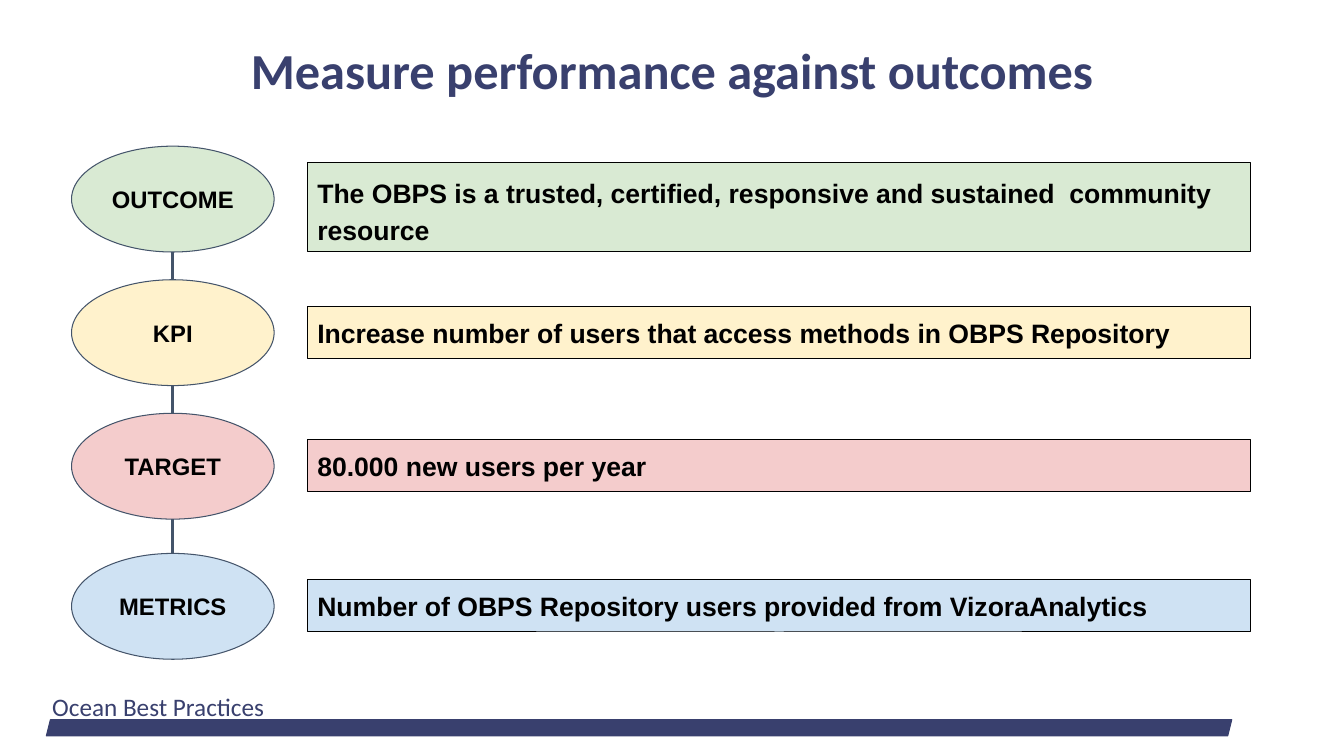
"""Build the slide that links an outcome to its KPI, target and metrics."""
from dataclasses import dataclass
from itertools import pairwise

from lxml import etree
from pptx import Presentation
from pptx import util as u
from pptx.dml.color import RGBColor
from pptx.enum import shapes, text
from pptx.oxml.ns import qn

WIDTH, HEIGHT = u.Inches(13.33), u.Inches(7.5)
COLUMNS, ROWS = 40, 30
NAVY, SLATE, BLACK = "39406E", "44546A", "000000"
BUBBLE_LEFT, BUBBLE_WIDTH, BUBBLE_HEIGHT = 2.13, 6.03, 4.2
PANEL_LEFT, PANEL_WIDTH = 9.15, 28.08


@dataclass(frozen=True)
class Level:
    label: str
    statement: str
    fill: str
    middle: float
    panel_top: float
    panel_height: float = 2.08
    line_spacing: float = 1.0


LEVELS = [
    Level("OUTCOME",
          "The OBPS is a trusted, certified, responsive and sustained  community resource",
          "D9EAD3", 7.9, 6.44, 3.56, 1.15),
    Level("KPI", "Increase number of users that access methods in OBPS Repository",
          "FFF2CC", 13.2, 12.16),
    Level("TARGET", "80.000 new users per year", "F4CCCC", 18.5, 17.44),
    Level("METRICS", "Number of OBPS Repository users provided from VizoraAnalytics",
          "CFE2F3", 24.06, 23),
]


def color(value: str) -> RGBColor:
    return RGBColor.from_string(value)


def across(columns: float) -> int:
    return round(WIDTH * columns / COLUMNS)


def down(rows: float) -> int:
    return round(HEIGHT * rows / ROWS)


def box(left: float, top: float, width: float, height: float) -> tuple[int, int, int, int]:
    return across(left), down(top), across(width), down(height)


def add_block(slide, kind, place: tuple, fill: str, line: str, weight: float = 0.75):
    shape = slide.shapes.add_shape(kind, *place)
    shape.shadow.inherit = False
    shape.fill.solid()
    shape.fill.fore_color.rgb = color(fill)
    shape.line.color.rgb = color(line)
    shape.line.width = u.Pt(weight)
    return shape


def write(shape, words: str, size: float, font: str, ink: str, bold: bool = True,
          align=text.PP_ALIGN.LEFT, anchor=text.MSO_ANCHOR.TOP,
          inset: float = 0.1, spacing: float = 1.0) -> None:
    frame = shape.text_frame
    frame.word_wrap = True
    frame.auto_size = text.MSO_AUTO_SIZE.NONE
    frame.vertical_anchor = anchor
    frame.margin_left = frame.margin_right = u.Inches(0.1)
    frame.margin_top = frame.margin_bottom = u.Inches(inset)
    paragraph = frame.paragraphs[0]
    paragraph.alignment = align
    paragraph.line_spacing = spacing
    run = paragraph.add_run()
    run.text = words
    run.font.size, run.font.name, run.font.bold = u.Pt(size), font, bold
    run.font.color.rgb = color(ink)


def add_level(slide, level: Level) -> None:
    bubble = add_block(slide, shapes.MSO_SHAPE.OVAL,
                       box(BUBBLE_LEFT, level.middle - BUBBLE_HEIGHT / 2,
                           BUBBLE_WIDTH, BUBBLE_HEIGHT), level.fill, SLATE)
    write(bubble, level.label, 17, "Arial", BLACK,
          align=text.PP_ALIGN.CENTER, anchor=text.MSO_ANCHOR.MIDDLE)
    panel = add_block(slide, shapes.MSO_SHAPE.RECTANGLE,
                      box(PANEL_LEFT, level.panel_top, PANEL_WIDTH, level.panel_height),
                      level.fill, BLACK)
    write(panel, level.statement, 19, "Arial", BLACK, spacing=level.line_spacing)


def add_link(slide, upper: Level, lower: Level) -> None:
    center = across(BUBBLE_LEFT + BUBBLE_WIDTH / 2)
    link = slide.shapes.add_connector(
        shapes.MSO_CONNECTOR.STRAIGHT, center, down(upper.middle + BUBBLE_HEIGHT / 2),
        center, down(lower.middle - BUBBLE_HEIGHT / 2))
    link.line.color.rgb = color(SLATE)
    link.line.width = u.Pt(2.25)
    etree.SubElement(link._element.spPr, qn("a:effectLst"))


def add_footer(slide) -> None:
    add_block(slide, shapes.MSO_SHAPE.PARALLELOGRAM, box(1.38, 28.56, 35.28, 0.64), NAVY, NAVY)
    add_block(slide, shapes.MSO_SHAPE.RECTANGLE, box(24.7, 28.6, 8.52, 0.52), NAVY, NAVY, 2)
    name = slide.shapes.add_textbox(*box(1.26, 27.24, 7.2, 1.6))
    write(name, "Ocean Best Practices", 18, "Calibri", NAVY, bold=False, inset=0.05)


def main() -> None:
    presentation = Presentation()
    presentation.slide_width, presentation.slide_height = WIDTH, HEIGHT
    slide = presentation.slides.add_slide(presentation.slide_layouts.get_by_name("Title Only"))
    title = slide.shapes.title
    title.left, title.top, title.width, title.height = box(2.76, 0, 34.5, 5.8)
    write(title, "Measure performance against outcomes", 36, "Calibri", NAVY,
          align=text.PP_ALIGN.CENTER, anchor=text.MSO_ANCHOR.MIDDLE, inset=0.05, spacing=0.9)
    add_footer(slide)
    for level in LEVELS:
        add_level(slide, level)
    for upper, lower in pairwise(LEVELS):
        add_link(slide, upper, lower)
    presentation.save("out.pptx")


if __name__ == "__main__":
    main()
